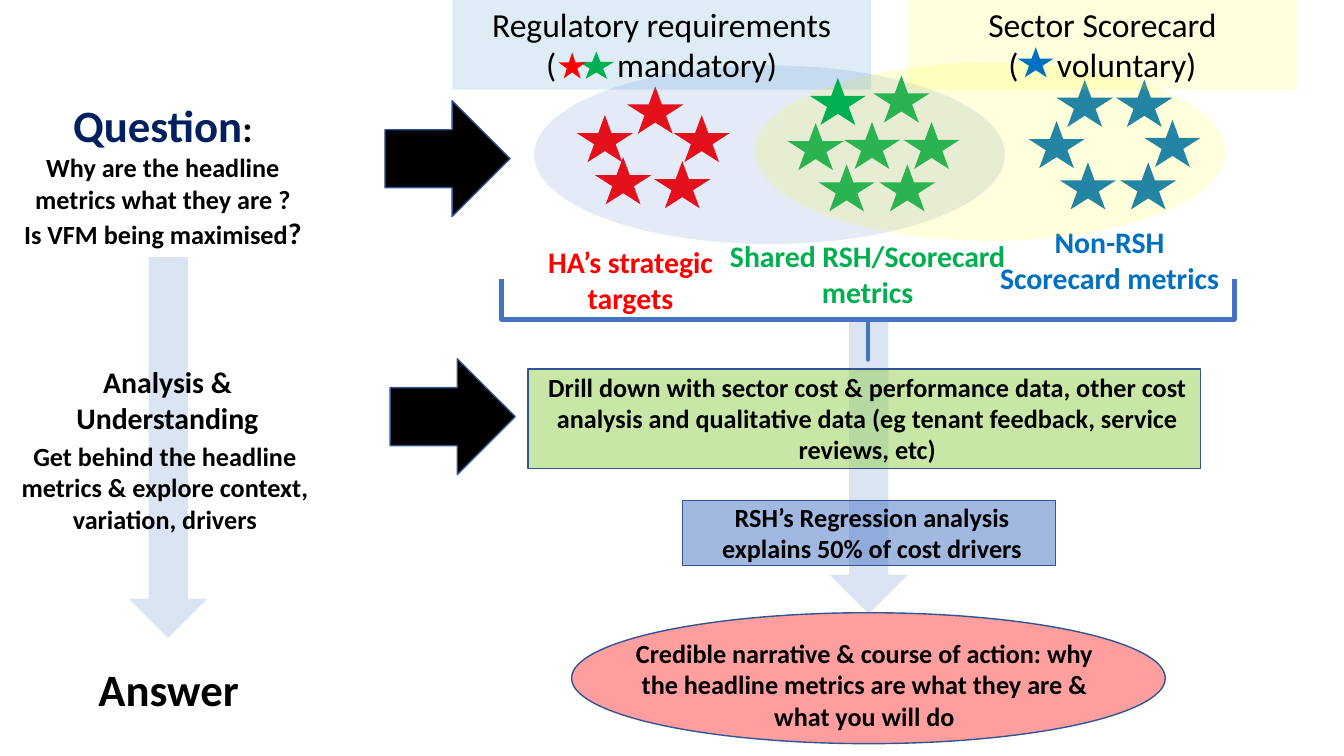
from dataclasses import dataclass

from lxml import etree
from pptx import Presentation
from pptx import util as u
from pptx.dml.color import RGBColor
from pptx.enum import shapes, text
from pptx.oxml.ns import qn

Cm, Pt = u.Cm, u.Pt
Kind = shapes.MSO_SHAPE


@dataclass(frozen=True)
class Theme:
    font: str = "Calibri"
    black: str = "000000"
    navy: str = "002060"
    red: str = "FF0000"
    green: str = "00B050"
    blue: str = "0070C0"
    yellow: str = "FFFF00"
    lime: str = "92D050"
    accent: str = "4472C4"
    outline: str = "325491"
    heading: float = 32
    colon: float = 26.7
    label: float = 24
    caption: float = 21.3
    body: float = 18.7


THEME = Theme()
STAR_SIZE = (1.42, 1.19)


def place(box, left, top, width, height):
    """Lengths for a part placed relative to its region's corner."""
    return Cm(box[0] + left), Cm(box[1] + top), Cm(width), Cm(height)


def set_font(font, size, color, bold=True):
    font.name, font.size, font.bold = THEME.font, Pt(size), bold
    font.color.rgb = RGBColor.from_string(color)


def add_shape(slide, kind, position, fill=None, opacity=100, line=None, weight=1):
    shape = slide.shapes.add_shape(kind, *position)
    shape.shadow.inherit = False
    if fill:
        shape.fill.solid()
        shape.fill.fore_color.rgb = RGBColor.from_string(fill)
        if opacity < 100:
            color = shape.fill._xPr.find(".//" + qn("a:srgbClr"))
            etree.SubElement(color, qn("a:alpha"), val=str(opacity * 1000))
    else:
        shape.fill.background()
    if line:
        shape.line.color.rgb = RGBColor.from_string(line)
        shape.line.width = Pt(weight)
    else:
        shape.line.fill.background()
    return shape


def add_text(slide, position, words, size, color=THEME.black):
    frame = slide.shapes.add_textbox(*position).text_frame
    frame.word_wrap = True
    paragraph = frame.paragraphs[0]
    paragraph.text = words
    paragraph.alignment = text.PP_ALIGN.CENTER
    set_font(paragraph.font, size, color)


def add_outcomes(slide, box):
    """Drill-down, regression and narrative, joined by a pale arrow."""
    add_shape(slide, Kind.DOWN_ARROW, place(box, 7.6, 0.03, 1.98, 7.44),
              THEME.accent, 19)
    outcomes = [
        (Kind.RECTANGLE, (0, 1.3, 16.94, 2.51), THEME.lime, 50,
         (0.08, 1.22, 16.94, 2.64),
         "Drill down with sector cost & performance data, other cost analysis "
         "and qualitative data (eg tenant feedback, service reviews, etc)"),
        (Kind.RECTANGLE, (3.9, 4.62, 9.4, 1.63), THEME.accent, 50,
         (3.97, 4.5, 9.4, 1.85),
         "RSH’s Regression analysis explains 50% of cost drivers"),
        (Kind.OVAL, (1.1, 7.44, 14.96, 3.3), THEME.red, 38,
         (2.32, 7.93, 12.32, 2.64),
         "Credible narrative & course of action: why the headline metrics "
         "are what they are & what you will do"),
    ]
    for kind, area, fill, opacity, text_area, words in outcomes:
        add_shape(slide, kind, place(box, *area), fill, opacity, THEME.outline)
        add_text(slide, place(box, *text_area), words, THEME.body)


def add_question(slide, box):
    """Question as the slide title, then analysis and answer."""
    title = slide.shapes.title
    title.left, title.top, title.width, title.height = place(
        box, 0.03, 0.04, 7.75, 4.14)
    frame = title.text_frame
    frame.auto_size = text.MSO_AUTO_SIZE.NONE
    frame.vertical_anchor = text.MSO_ANCHOR.TOP
    lines = [
        [("Question", THEME.heading, THEME.navy), (":", THEME.colon, THEME.black)],
        [("Why are the headline metrics what they are ?", THEME.body, THEME.black)],
        [("Is VFM being maximised", THEME.body, THEME.black),
         ("?", THEME.caption, THEME.black)],
    ]
    for number, runs in enumerate(lines):
        paragraph = frame.add_paragraph() if number else frame.paragraphs[0]
        paragraph.alignment = text.PP_ALIGN.CENTER
        for words, size, color in runs:
            run = paragraph.add_run()
            run.text = words
            set_font(run.font, size, color)

    add_shape(slide, Kind.DOWN_ARROW, place(box, 3.05, 4.18, 1.98, 9.6),
              THEME.accent, 19)
    add_text(slide, place(box, 0.26, 6.74, 7.52, 2.08),
             "Analysis & Understanding", THEME.caption)
    add_text(slide, place(box, 0.08, 8.67, 7.75, 2.64),
             "Get behind the headline metrics & explore context, variation, drivers",
             THEME.body)
    add_text(slide, place(box, 0.89, 14.24, 6.32, 1.63), "Answer", THEME.heading)


def add_label(slide, position, fill, heading, note, gap):
    """Tinted label whose note leaves a gap in points for its star key."""
    frame = add_shape(slide, Kind.RECTANGLE, position, fill, 13).text_frame
    frame.word_wrap = True
    frame.vertical_anchor = text.MSO_ANCHOR.MIDDLE
    first, second = frame.paragraphs[0], frame.add_paragraph()
    first.text = heading
    for words in ("(", " ", note):
        second.add_run().text = words
    second.runs[1].font._element.set("spc", str(gap * 100))
    for paragraph in (first, second):
        paragraph.alignment = text.PP_ALIGN.CENTER
        set_font(paragraph.font, THEME.label, THEME.black, False)


def add_scorecard(slide, box):
    """Overlapping metric sets with labels, captions and bracket."""
    captions = [
        ((1.22, 6.02, 6.53, 2.08), "HA’s strategic targets", THEME.red),
        ((6.46, 5.87, 8, 2.08), "Shared RSH/Scorecard metrics", THEME.green),
        ((13.42, 5.51, 6.27, 2.08), "Non-RSH Scorecard metrics", THEME.blue),
    ]
    for area, words, color in captions:
        add_text(slide, place(box, *area), words, THEME.caption, color)

    bracket = add_shape(slide, Kind.RIGHT_BRACE, place(box, 9.45, -1.19, 2.03, 18.47),
                        line=THEME.accent, weight=3.25)
    bracket.rotation = 90
    bracket.adjustments[0] = 0

    # Stars under the two sets
    metrics = {
        THEME.red: [(4.4, 2.18), (3.13, 2.9), (5.57, 2.9), (3.59, 3.96), (5.08, 4.06)],
        THEME.green: [(10.6, 1.9), (8.44, 3.1), (9.86, 3.07), (11.36, 3.07),
                      (9.22, 4.14), (10.75, 4.14)],
        THEME.blue: [(15.22, 2.01), (16.72, 2.01), (14.51, 3.05), (17.43, 3.02),
                     (15.3, 4.09), (16.82, 4.09)],
    }
    for color, corners in metrics.items():
        for corner in corners:
            add_shape(slide, Kind.STAR_5_POINT, place(box, *corner, *STAR_SIZE), color)

    for left, top, color in ((2.06, 1.65, THEME.accent), (7.62, 1.57, THEME.yellow)):
        add_shape(slide, Kind.OVAL, place(box, left, top, 11.86, 4.5), color, 14)

    add_label(slide, place(box, 0, -0.05, 10.54, 2.31), THEME.blue,
              "Regulatory requirements", "mandatory)", 38)
    add_label(slide, place(box, 11.46, -0.05, 9.83, 2.31), THEME.yellow,
              "Sector Scorecard", "voluntary)", 22)

    # Star keys in the labels, and the front shared star
    front_stars = [
        ((3.18, 1.3, 0.89, 0.69), THEME.green),
        ((2.67, 1.32, 0.69, 0.66), THEME.red),
        ((14.25, 1.19, 0.89, 0.76), THEME.blue),
        ((9, 1.96, *STAR_SIZE), THEME.green),
    ]
    for area, color in front_stars:
        add_shape(slide, Kind.STAR_5_POINT, place(box, *area), color)


def add_pointers(slide, box):
    """Black arrows from the left column to the right."""
    for left, top in ((0, 0), (0.13, 6.5)):
        add_shape(slide, Kind.RIGHT_ARROW, place(box, left, top, 3.15, 2.92),
                  THEME.black, line=THEME.outline)


def main():
    presentation = Presentation()
    presentation.slide_width, presentation.slide_height = Cm(33.86), Cm(19.05)
    slide = presentation.slides.add_slide(
        presentation.slide_layouts.get_by_name("Title Only"))
    add_outcomes(slide, (13.3, 8))
    add_question(slide, (0.2, 2.3))
    add_scorecard(slide, (11.4, 0))
    add_pointers(slide, (9.7, 2.54))
    presentation.save("out.pptx")


if __name__ == "__main__":
    main()
